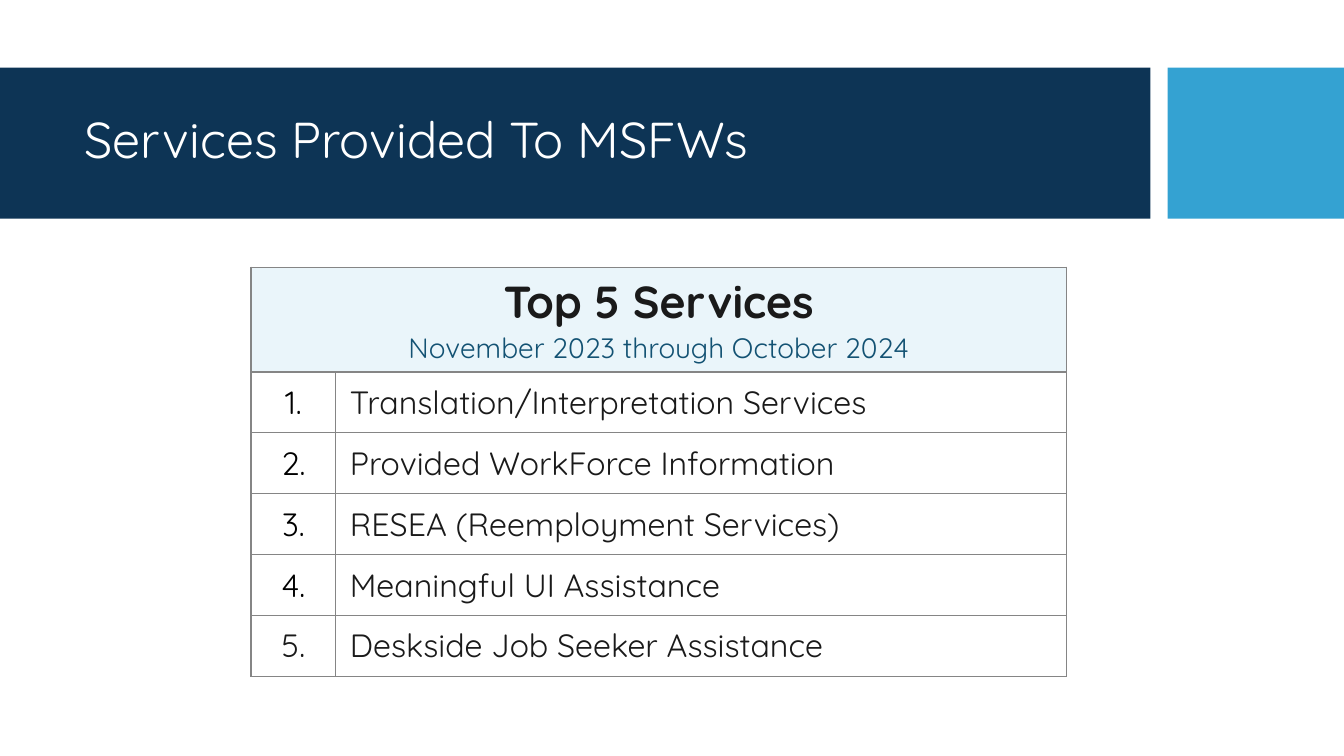
from lxml import etree
from pptx import Presentation
from pptx.dml.color import RGBColor
from pptx.enum.shapes import MSO_SHAPE
from pptx.enum.text import MSO_ANCHOR, PP_ALIGN
from pptx.oxml.ns import qn
from pptx.util import Inches, Pt

NAVY = RGBColor(0x0D, 0x34, 0x55)
SKY = RGBColor(0x34, 0xA2, 0xD2)
PALE = RGBColor(0xEA, 0xF5, 0xFA)
TEAL = RGBColor(0x13, 0x52, 0x73)
INK = RGBColor(0x1A, 0x1A, 0x1A)
BLACK = RGBColor(0, 0, 0)
WHITE = RGBColor(0xFF, 0xFF, 0xFF)
BORDER = "858585"

SERVICES = [
    "Translation/Interpretation Services",
    "Provided WorkForce Information",
    "RESEA (Reemployment Services)",
    "Meaningful UI Assistance",
    "Deskside Job Seeker Assistance",
]


def style(paragraph, size, color, bold=False, align=PP_ALIGN.LEFT):
    paragraph.alignment = align
    for run in paragraph.runs:
        run.font.name = "Quicksand"
        run.font.size = Pt(size)
        run.font.bold = bold
        run.font.color.rgb = color


def format_cell(cell, fill=None):
    cell.vertical_anchor = MSO_ANCHOR.MIDDLE
    cell.margin_left = cell.margin_right = Inches(0.14)
    cell.margin_top = cell.margin_bottom = Inches(0.07)
    props = cell._tc.get_or_add_tcPr()
    for side in ("a:lnL", "a:lnR", "a:lnT", "a:lnB"):
        line = etree.SubElement(props, qn(side), w=str(Pt(1)))
        solid = etree.SubElement(line, qn("a:solidFill"))
        etree.SubElement(solid, qn("a:srgbClr"), val=BORDER)
    if fill is None:
        cell.fill.background()
    else:
        cell.fill.solid()
        cell.fill.fore_color.rgb = fill


prs = Presentation()
prs.slide_width = Inches(13.33)
prs.slide_height = Inches(7.5)
slide = prs.slides.add_slide(prs.slide_layouts[6])

for left, width, color in [(0, 11.41, NAVY), (11.58, 1.75, SKY)]:
    band = slide.shapes.add_shape(
        MSO_SHAPE.RECTANGLE, Inches(left), Inches(0.67), Inches(width), Inches(1.5))
    band.shadow.inherit = False
    band.fill.solid()
    band.fill.fore_color.rgb = color
    band.line.fill.background()

title = slide.shapes.add_textbox(Inches(0.74), Inches(0.82), Inches(10.51), Inches(1.18)).text_frame
title.word_wrap = True
title.vertical_anchor = MSO_ANCHOR.MIDDLE
title.text = "Services Provided To MSFWs"
title.paragraphs[0].line_spacing = 0.9
style(title.paragraphs[0], 36, WHITE)

ranking = slide.shapes.add_table(
    len(SERVICES) + 1, 2, Inches(2.49), Inches(2.65), Inches(8.09), Inches(4.06)).table
ranking.first_row = False
ranking.horz_banding = False
ranking.columns[0].width = Inches(0.84)
ranking.columns[1].width = Inches(7.25)
ranking.rows[0].height = Inches(1.04)

heading = ranking.cell(0, 0)
heading.merge(ranking.cell(0, 1))
for cell in (heading, ranking.cell(0, 1)):
    format_cell(cell, PALE)
heading.text_frame.text = "Top 5 Services"
style(heading.text_frame.paragraphs[0], 32, INK, True, PP_ALIGN.CENTER)
period = heading.text_frame.add_paragraph()
period.text = "November 2023 through October 2024"
style(period, 20, TEAL, align=PP_ALIGN.CENTER)

for rank, service in enumerate(SERVICES, 1):
    ranking.rows[rank].height = Inches(0.604)
    number, name = ranking.cell(rank, 0), ranking.cell(rank, 1)
    number.text_frame.text = f"{rank}."
    name.text_frame.text = service
    number_color = INK if rank == len(SERVICES) else BLACK
    style(number.text_frame.paragraphs[0], 23, number_color, align=PP_ALIGN.CENTER)
    style(name.text_frame.paragraphs[0], 23, INK)
    format_cell(number)
    format_cell(name)

prs.save("out.pptx")
